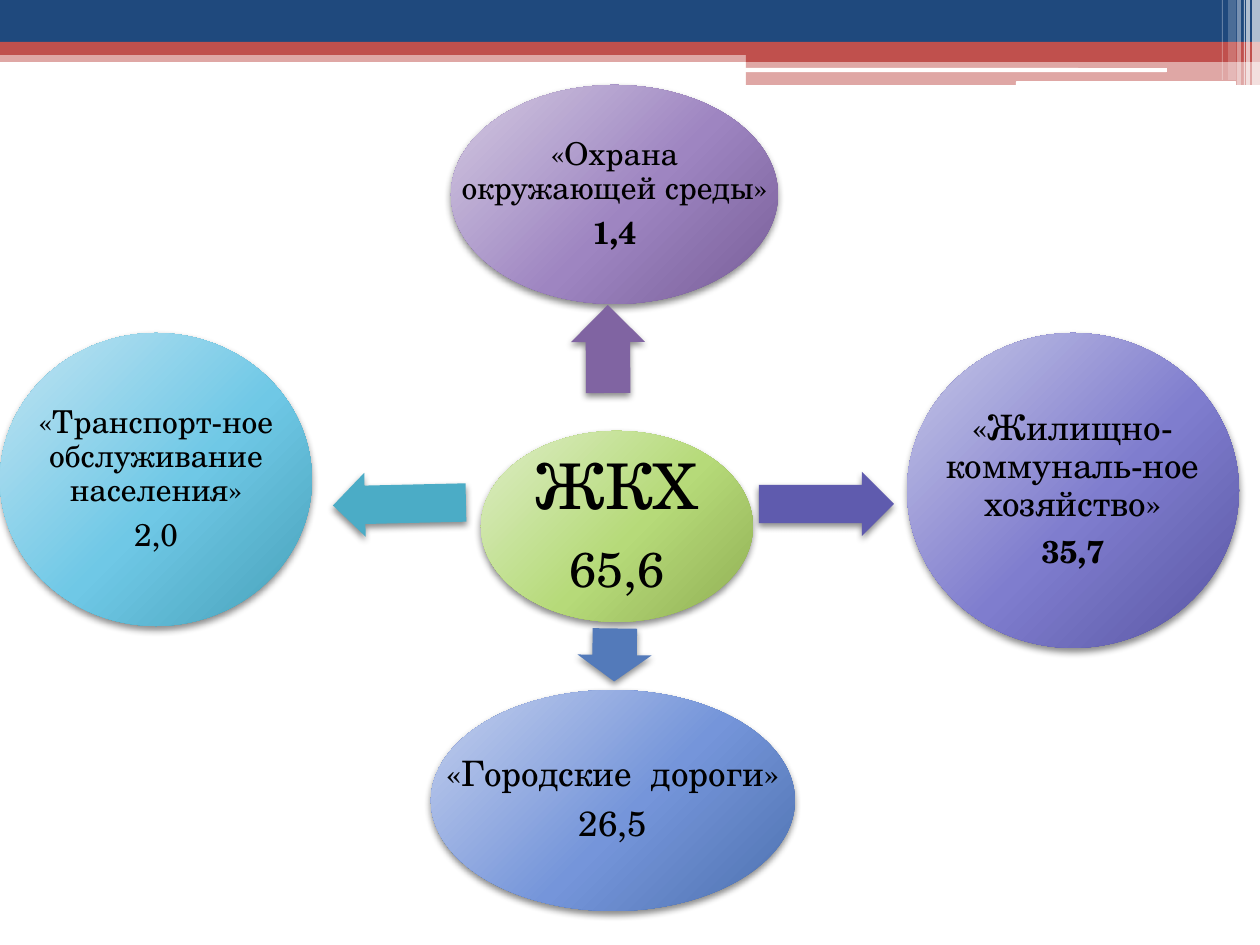
import dataclasses

import lxml.etree
import pptx
import pptx.dml.color
import pptx.enum.shapes
import pptx.enum.text
import pptx.oxml
import pptx.oxml.ns
import pptx.util

SCALE = 914400 / 126
KIND = pptx.enum.shapes.MSO_SHAPE


@dataclasses.dataclass(frozen=True)
class Theme:
    """Colours, font and type sizes of the slide."""
    font: str = "TeX Gyre Schola"
    ink: str = "000000"
    white: str = "FFFFFF"
    navy: str = "1F497D"
    red: str = "C0504D"
    green: tuple = ("DDEDC6", "B6DA79", "90AE53")
    plum: tuple = ("D4CBE2", "9E85C1", "775D97")
    violet: tuple = ("C8C8E7", "7F7DCE", "5855A2")
    blue: tuple = ("C5D0ED", "7595DA", "4D71AE")
    aqua: tuple = ("C2E4F2", "6FC8E6", "46A0B8")
    arrows: tuple = ("8064A2", "5F5BAE", "537ABA", "4BACC6")
    huge: int = 36
    large: int = 28
    mid: int = 20
    small: int = 18


THEME = Theme()


def emu(box):
    """Turn a box in px into EMU lengths."""
    return [pptx.util.Emu(round(side * SCALE)) for side in box]


def shift(box, left, top):
    """Move a box by the corner of its region."""
    return (box[0] + left, box[1] + top, *box[2:])


def tag(parent, name, **attrs):
    """Add a drawing element with its attributes."""
    child = lxml.etree.SubElement(parent, pptx.oxml.ns.qn("a:" + name))
    for key, value in attrs.items():
        child.set(key, str(value))
    return child


def block(slide, kind, box, color=None, alpha=100):
    """Add a flat shape without line or shadow."""
    shape = slide.shapes.add_shape(kind, *emu(box))
    shape.shadow.inherit = False
    shape.line.fill.background()
    if color:
        shape.fill.solid()
        shape.fill.fore_color.rgb = pptx.dml.color.RGBColor.from_string(color)
        if alpha < 100:
            hue = shape.element.spPr.find(".//" + pptx.oxml.ns.qn("a:srgbClr"))
            tag(hue, "alpha", val=alpha * 1000)
    return shape


def shade(shape):
    """Give a shape a soft shadow below it."""
    effect = shape.element.spPr.find(pptx.oxml.ns.qn("a:effectLst"))
    outer = tag(effect, "outerShdw", blurRad=50800, dist=25400, dir=5400000, rotWithShape=0)
    tag(tag(outer, "srgbClr", val=THEME.ink), "alpha", val=45000)


def blend(shape, colors):
    """Fill a shape with a three-stop circular gradient."""
    spot = pptx.oxml.parse_xml(f'<a:gradFill {pptx.oxml.ns.nsdecls("a")} rotWithShape="1"/>')
    stops = tag(spot, "gsLst")
    for place, color in zip((0, 55, 100), colors):
        tag(tag(stops, "gs", pos=place * 1000), "srgbClr", val=color)
    ring = tag(spot, "path", path="circle")
    tag(ring, "fillToRect", l=-40000, t=-90000, r=140000, b=190000)
    shape.element.spPr.insert(2, spot)


def write(frame, text, size, bold=False, first=False):
    """Add one centred paragraph in the given format."""
    para = frame.paragraphs[0] if first else frame.add_paragraph()
    para.text = text
    para.alignment = pptx.enum.text.PP_ALIGN.CENTER
    para.line_spacing = 0.9
    para.space_after = pptx.util.Pt(round(size * 0.35, 1))
    para.font.name = THEME.font
    para.font.size = pptx.util.Pt(size)
    para.font.bold = bold
    para.font.color.rgb = pptx.dml.color.RGBColor.from_string(THEME.ink)


def node(slide, box, colors, label, value, sizes, bold=False, inset=4):
    """Draw an ellipse with a label and its value."""
    disc = block(slide, KIND.OVAL, box)
    blend(disc, colors)
    shade(disc)
    frame = slide.shapes.add_textbox(*emu(box)).text_frame
    frame.word_wrap = True
    frame.vertical_anchor = pptx.enum.text.MSO_ANCHOR.MIDDLE
    gap = emu([inset])[0]
    frame.margin_left = frame.margin_right = gap
    frame.margin_top = frame.margin_bottom = gap
    write(frame, label, sizes[0], first=True)
    write(frame, value, sizes[1], bold=bold)


def arrow(slide, box, color, turn):
    """Draw a block arrow turned by some degrees."""
    shape = block(slide, KIND.RIGHT_ARROW, box, color)
    shape.adjustments[0] = 0.6
    shape.adjustments[1] = 0.5
    shape.rotation = turn
    shade(shape)


def header(slide, box):
    """Draw the colour bands and stripes at the top."""
    left, top, width, depth = box
    half = 746
    bands = (
        ((0, 50, width, 12), THEME.red, 50),
        ((0, 0, width, 42), THEME.navy, 100),
        ((0, 42, width, 13), THEME.red, 100),
        ((half, 49, width - half, 13), THEME.red, 100),
        ((half, 62, width - half, depth - 62), THEME.red, 50),
    )
    for part, color, alpha in bands:
        block(slide, KIND.RECTANGLE, shift(part, left, top), color, alpha)
    for part in ((745, 68, 422, 4), (1016, 81, 220, 5)):
        bar = block(slide, KIND.ROUNDED_RECTANGLE, shift(part, left, top), THEME.white)
        bar.adjustments[0] = 0.17
    stripes = (
        (1252, 8, depth, 65), (1246, 4, depth, 65), (1244, 1, depth, 60),
        (1237, 4, depth, 40), (1228, 8, depth - 5, 20), (1222, 1, depth - 5, 30),
    )
    for x, wide, tall, alpha in stripes:
        part = shift((x, 0, wide, tall), left, top)
        block(slide, KIND.RECTANGLE, part, THEME.white, alpha)


def wheel(slide, box):
    """Draw the hub, its four arrows and the outer nodes."""
    left, top = box[:2]
    mid, small = THEME.mid, THEME.small
    nodes = (
        ((481, 346, 272, 191), THEME.green, "ЖКХ", "65,6", (THEME.huge, THEME.large), False, 6),
        ((451, 0, 327, 219), THEME.plum, "«Охрана окружающей среды»", "1,4", (small, small), True),
        ((907, 248, 332, 315), THEME.violet, "«Жилищно-коммуналь-ное хозяйство»",
         "35,7", (mid, small), True),
        ((431, 605, 364, 221), THEME.blue, "«Городские  дороги»", "26,5", (mid, mid)),
        ((0, 248, 312, 293), THEME.aqua, "«Транспорт-ное обслуживание населения»",
         "2,0", (small, small)),
    )
    arrows = (
        ((564, 227, 88, 74), 269.7), ((759, 387, 135, 64), 0),
        ((588, 533, 53, 74), 90.8), ((333, 387, 133, 64), 178.7),
    )
    for part, *rest in nodes:
        node(slide, shift(part, left, top), *rest)
    for (part, turn), color in zip(arrows, THEME.arrows):
        arrow(slide, shift(part, left, top), color, turn)


def main():
    """Build the slide and save it."""
    deck = pptx.Presentation()
    deck.slide_width, deck.slide_height = emu((1260, 945))
    slide = deck.slides.add_slide(deck.slide_layouts[6])
    header(slide, (0, 0, 1260, 85))
    wheel(slide, (0, 85, 1239, 826))
    deck.save("out.pptx")


if __name__ == "__main__":
    main()
